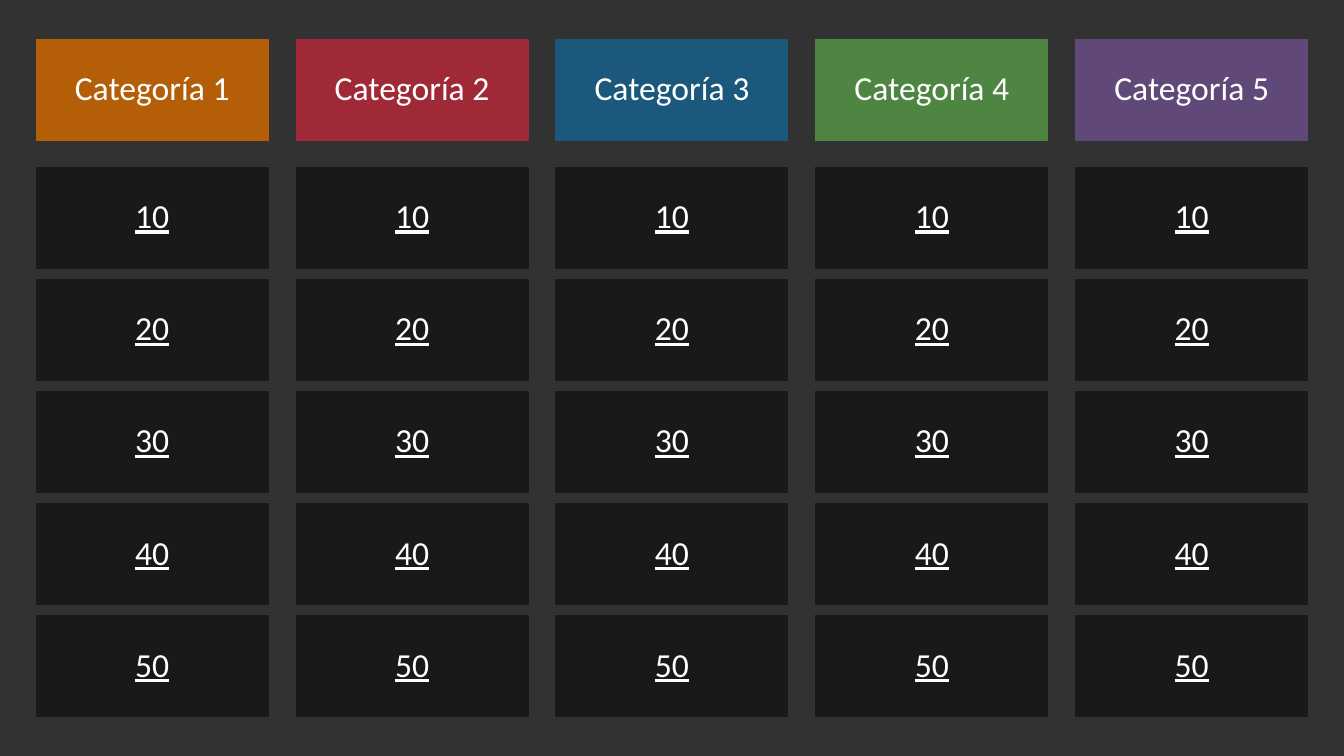
from pptx import Presentation
from pptx.dml.color import RGBColor
from pptx.enum.shapes import MSO_SHAPE
from pptx.enum.text import MSO_ANCHOR, PP_ALIGN
from pptx.util import Inches, Pt

SLIDE_WIDTH, SLIDE_HEIGHT = 13.33, 7.5
TILE_WIDTH, TILE_HEIGHT = 2.3, 1
MARGIN = 0.36
HEADER_TOP = 0.39
FIRST_ROW_TOP, LAST_ROW_TOP = 1.66, 6.11
CATEGORY_COLORS = ["B45F07", "9F2936", "1B587C", "4E8542", "604878"]
POINTS = [10, 20, 30, 40, 50]


def color(hex_value):
    return RGBColor.from_string(hex_value)


def apply(target, formats):
    for name, value in formats.items():
        setattr(target, name, value)


def spread(first, last, count):
    """Return count evenly spaced positions from first to last."""
    return [first + (last - first) * i / (count - 1) for i in range(count)]


class Board:
    background = "323232"
    tile_color = "191919"
    text_color = "FFFFFF"
    frame_format = {"word_wrap": True, "vertical_anchor": MSO_ANCHOR.MIDDLE}
    paragraph_format = {"alignment": PP_ALIGN.CENTER, "line_spacing": 0.9}
    font_format = {"name": "Calibri", "size": Pt(24)}

    def __init__(self, slide):
        self.slide = slide
        fill = slide.background.fill
        fill.solid()
        fill.fore_color.rgb = color(self.background)

    def tile(self, text, left, top, fill_color, underline=False):
        tile = self.slide.shapes.add_shape(
            MSO_SHAPE.RECTANGLE, Inches(left), Inches(top),
            Inches(TILE_WIDTH), Inches(TILE_HEIGHT))
        tile.shadow.inherit = False
        tile.fill.solid()
        tile.fill.fore_color.rgb = color(fill_color)
        tile.line.color.rgb = color(fill_color)
        tile.line.width = Pt(0.75)
        apply(tile.text_frame, self.frame_format)
        paragraph = tile.text_frame.paragraphs[0]
        apply(paragraph, self.paragraph_format)
        run = paragraph.add_run()
        run.text = text
        apply(run.font, self.font_format | {"underline": underline})
        run.font.color.rgb = color(self.text_color)

    def category(self, title, left, fill_color):
        self.tile(title, left, HEADER_TOP, fill_color)

    def question(self, points, left, top):
        self.tile(str(points), left, top, self.tile_color, underline=True)


def main():
    presentation = Presentation()
    presentation.slide_width = Inches(SLIDE_WIDTH)
    presentation.slide_height = Inches(SLIDE_HEIGHT)
    board = Board(presentation.slides.add_slide(presentation.slide_layouts[6]))

    last_left = SLIDE_WIDTH - MARGIN - TILE_WIDTH
    lefts = spread(MARGIN, last_left, len(CATEGORY_COLORS))
    tops = spread(FIRST_ROW_TOP, LAST_ROW_TOP, len(POINTS))
    for number, (left, category_color) in enumerate(zip(lefts, CATEGORY_COLORS), 1):
        board.category(f"Categoría {number}", left, category_color)
        for points, top in zip(POINTS, tops):
            board.question(points, left, top)

    presentation.save("out.pptx")


if __name__ == "__main__":
    main()
